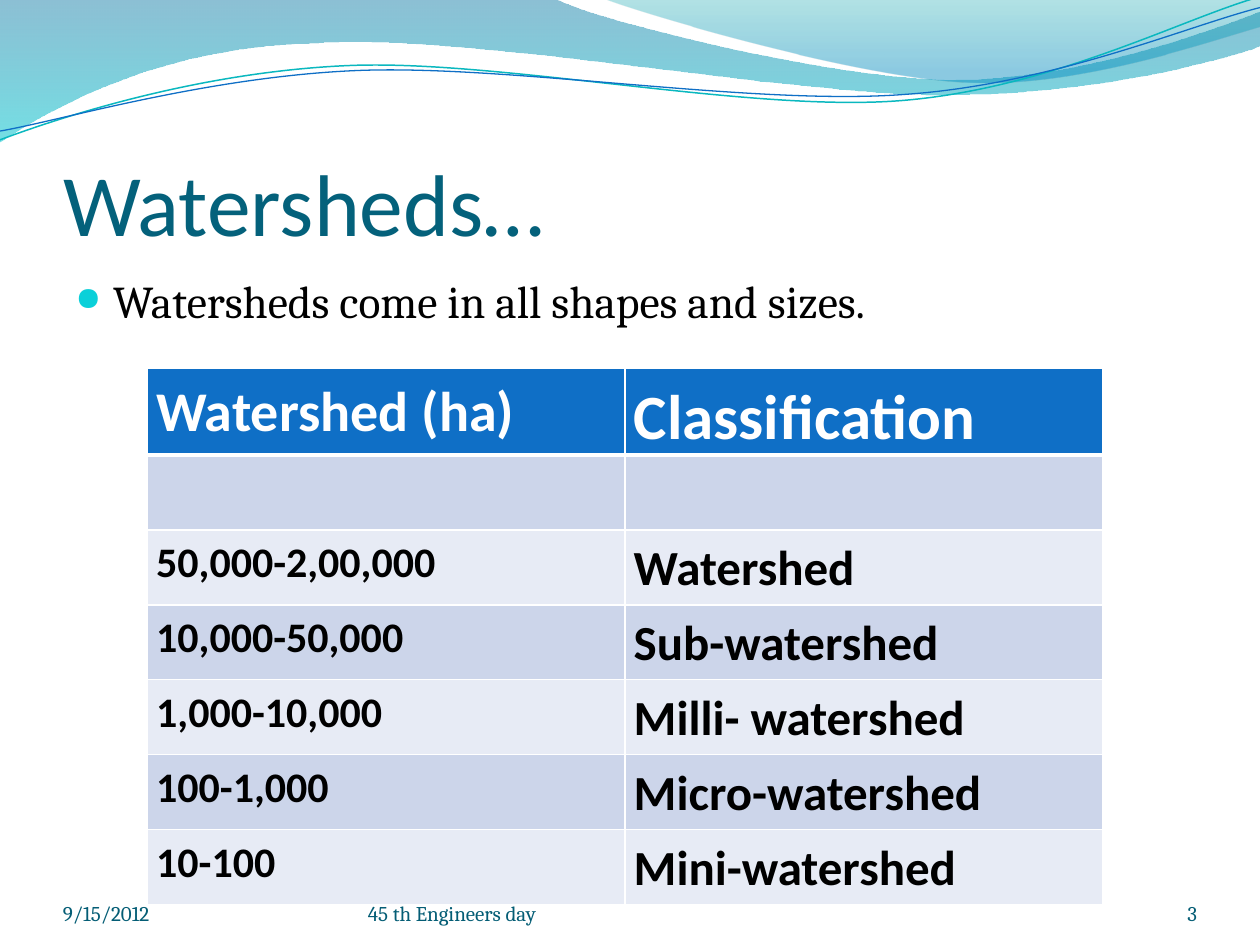
from math import cos, radians, sin

from lxml import etree
from pptx import Presentation
from pptx.dml.color import RGBColor
from pptx.enum.text import MSO_ANCHOR, MSO_AUTO_SIZE, PP_ALIGN
from pptx.oxml import parse_xml
from pptx.oxml.ns import nsdecls, qn
from pptx.util import Pt

PX = 9144  # EMU per px, 100 px to the inch
LEFT, RIGHT = PP_ALIGN.LEFT, PP_ALIGN.RIGHT
TOP, BOTTOM = MSO_ANCHOR.TOP, MSO_ANCHOR.BOTTOM
NO_AUTOFIT = MSO_AUTO_SIZE.NONE
TITLE_ONLY = 5
LINE_TILT = -2.7  # degrees

HEADING_FONT, BODY_FONT = "Calibri", "Cambria"
WHITE = RGBColor(0xFF, 0xFF, 0xFF)
BLACK = RGBColor(0x00, 0x00, 0x00)
TITLE_TEAL = RGBColor(0x04, 0x61, 0x7B)
FOOTER_TEAL = RGBColor(0x04, 0x5D, 0x75)
BULLET_CYAN = RGBColor(0x0B, 0xD0, 0xD9)
BLUE = RGBColor(0x0F, 0x6F, 0xC6)
AQUA = RGBColor(0x0A, 0xB8, 0xBF)
BANDS = (RGBColor(0xE7, 0xEB, 0xF5), RGBColor(0xCC, 0xD5, 0xEA))

# Each wave is a start point and segments: 2 numbers a line, 6 a curve
# Gradient stops are position, colour, opacity in percent
FILLED_WAVES = [
    ([(0, 0), (440, -1), (476, 17, 664, 63, 758, 63), (853, 63, 958, 26, 1000, 9),
      (1001, 36), (983, 44, 870, 76, 746, 75), (622, 75, 382, 28, 257, 34),
      (129, 36, 46, 83, -1, 113)],
     [(0, RGBColor(0x00, 0x74, 0xA1), 45), (1, RGBColor(0x00, 0xC6, 0xCF), 55)]),
    ([(479, -1), (509, 11, 682, 62, 769, 65), (856, 69, 961, 32, 1000, 21), (1000, 0)],
     [(0, RGBColor(0x00, 0xA1, 0xA9), 30), (0.8, RGBColor(0x00, 0x8B, 0xBF), 45)]),
]
# Line waves add the centre they are tilted about
LINE_WAVES = [
    ([(0, 111), (48, 93, 158, 57, 277, 52), (395, 47, 593, 89, 713, 80),
      (833, 71, 938, 15, 998, -2)], (499, 57.5), AQUA, 0.85),
    ([(0, 104), (47, 96, 164, 61, 283, 56), (403, 51, 597, 84, 717, 75),
      (836, 67, 941, 21, 1000, 6)], (499.5, 59), BLUE, 0.75),
]

TABLE_ROWS = [
    ("Watershed (ha)", "Classification"),
    ("", ""),
    ("50,000-2,00,000", "Watershed"),
    ("10,000-50,000", "Sub-watershed"),
    ("1,000-10,000", "Milli- watershed"),
    ("100-1,000", "Micro-watershed"),
    ("10-100", "Mini-watershed"),
]
HEADER_SIZES, BODY_SIZES = (32, 36), (24, 28)
FOOTERS = [
    ("9/15/2012", 50, 233, LEFT),
    ("3", 867, 83, RIGHT),
    ("45 th Engineers day", 292, 367, LEFT),
]


def px(*values):
    return [value * PX for value in values]


def rotate(point, center, degrees):
    angle = radians(degrees)
    x, y = point[0] - center[0], point[1] - center[1]
    return (center[0] + x * cos(angle) - y * sin(angle),
            center[1] + x * sin(angle) + y * cos(angle))


def add_wave(slide, segments, close, center=(0, 0), tilt=0):
    points = [rotate(segment[i:i + 2], center, -tilt)
              for segment in segments for i in range(0, len(segment), 2)]
    points = [(round(x * PX), round(y * PX)) for x, y in points]
    builder = slide.shapes.build_freeform(*points[0])
    builder.add_line_segments(points[1:], close=close)
    shape = builder.convert_to_shape()
    shape.shadow.inherit = False
    shape.rotation = tilt

    # Join each three line points of a curve into one cubic segment
    lines = iter(list(shape._element.iter(qn("a:lnTo"))))
    for segment in segments[1:]:
        first = next(lines)
        if len(segment) == 6:
            first.tag = qn("a:cubicBezTo")
            for _ in range(2):
                line = next(lines)
                first.append(line[0])
                line.getparent().remove(line)
    return shape


def add_filled_wave(slide, segments, stops):
    shape = add_wave(slide, segments, True)
    shape.line.fill.background()
    shape.fill.gradient()
    shape.fill.gradient_angle = 270
    for stop, (position, color, _) in zip(shape.fill.gradient_stops, stops):
        stop.position = position
        stop.color.rgb = color
    colors = shape._element.spPr.iter(qn("a:srgbClr"))
    for color, (_, _, opacity) in zip(colors, stops):
        etree.SubElement(color, qn("a:alpha"), val=str(opacity * 1000))


def add_line_wave(slide, segments, center, color, width):
    shape = add_wave(slide, segments, False, center, LINE_TILT)
    shape.fill.background()
    shape.line.color.rgb = color
    shape.line.width = Pt(width)


def write(frame, text, size, font, color, align=LEFT, bold=False):
    frame.word_wrap = True
    paragraph = frame.paragraphs[0]
    paragraph.text = text
    paragraph.alignment = align
    paragraph.font.size = Pt(size)
    paragraph.font.name = font
    paragraph.font.color.rgb = color
    paragraph.font.bold = bold
    return paragraph


def set_insets(frame, top=0):
    frame.margin_left = frame.margin_right = frame.margin_bottom = 0
    frame.margin_top = top * PX


def set_title(slide, text):
    title = slide.shapes.title
    title.left, title.top, title.width, title.height = px(50, 77, 900, 125)
    frame = title.text_frame
    frame.auto_size = NO_AUTOFIT
    frame.vertical_anchor = BOTTOM
    set_insets(frame, 5)
    write(frame, text, 50, HEADING_FONT, TITLE_TEAL)


def add_bullet(slide, text):
    box = slide.shapes.add_textbox(*px(50, 212, 900, 480))
    paragraph = write(box.text_frame, text, 26, BODY_FONT, BLACK)
    paragraph.space_before = Pt(5)
    properties = paragraph._p.get_or_add_pPr()
    properties.set("marL", str(30 * PX))
    properties.set("indent", str(-30 * PX))
    color = etree.SubElement(properties, qn("a:buClr"))
    etree.SubElement(color, qn("a:srgbClr"), val=str(BULLET_CYAN))
    etree.SubElement(properties, qn("a:buSzPct"), val="72000")
    etree.SubElement(properties, qn("a:buChar"), char="●")
    # The schema wants the default run properties after the bullet
    properties.append(properties.find(qn("a:defRPr")))


def add_footer(slide, text, left, width, align):
    frame = slide.shapes.add_textbox(*px(left, 695, width, 40)).text_frame
    frame.vertical_anchor = BOTTOM
    set_insets(frame)
    write(frame, text, 12, BODY_FONT, FOOTER_TEAL, align)


def set_borders(cell, top, bottom):
    properties = cell._tc.get_or_add_tcPr()
    widths = (("lnL", 1), ("lnR", 1), ("lnT", top), ("lnB", bottom))
    for index, (side, width) in enumerate(widths):
        properties.insert(index, parse_xml(
            f'<a:{side} {nsdecls("a")} w="{Pt(width)}"><a:solidFill>'
            f'<a:srgbClr val="{WHITE}"/></a:solidFill></a:{side}>'))


def add_watershed_table(slide):
    header_height, total_height = 69, 426
    table = slide.shapes.add_table(len(TABLE_ROWS), 2,
                                   *px(117, 292, 758, total_height)).table
    for row in table.rows:
        row.height = (total_height - header_height) * PX // (len(TABLE_ROWS) - 1)
    table.rows[0].height = header_height * PX
    for row, texts in enumerate(TABLE_ROWS):
        header = row == 0
        sizes = HEADER_SIZES if header else BODY_SIZES
        for column, (text, size) in enumerate(zip(texts, sizes)):
            cell = table.cell(row, column)
            cell.fill.solid()
            cell.fill.fore_color.rgb = BLUE if header else BANDS[row % 2]
            set_borders(cell, 3 if row == 1 else 1, 3 if header else 1)
            cell.vertical_anchor = TOP
            cell.margin_left = cell.margin_right = 7 * PX
            cell.margin_top = cell.margin_bottom = 0
            if text:
                paragraph = write(cell.text_frame, text, size, HEADING_FONT,
                                  WHITE if header else BLACK, bold=True)
                paragraph.line_spacing = 1.15


def main():
    presentation = Presentation()
    presentation.slide_width, presentation.slide_height = px(1000, 750)
    slide = presentation.slides.add_slide(presentation.slide_layouts[TITLE_ONLY])

    # Wave decoration
    for wave in FILLED_WAVES:
        add_filled_wave(slide, *wave)
    for wave in LINE_WAVES:
        add_line_wave(slide, *wave)

    # Content
    set_title(slide, "Watersheds…")
    add_bullet(slide, "Watersheds come in all shapes and sizes.")
    add_watershed_table(slide)

    # Footer
    for footer in FOOTERS:
        add_footer(slide, *footer)
    presentation.save("out.pptx")


if __name__ == "__main__":
    main()
